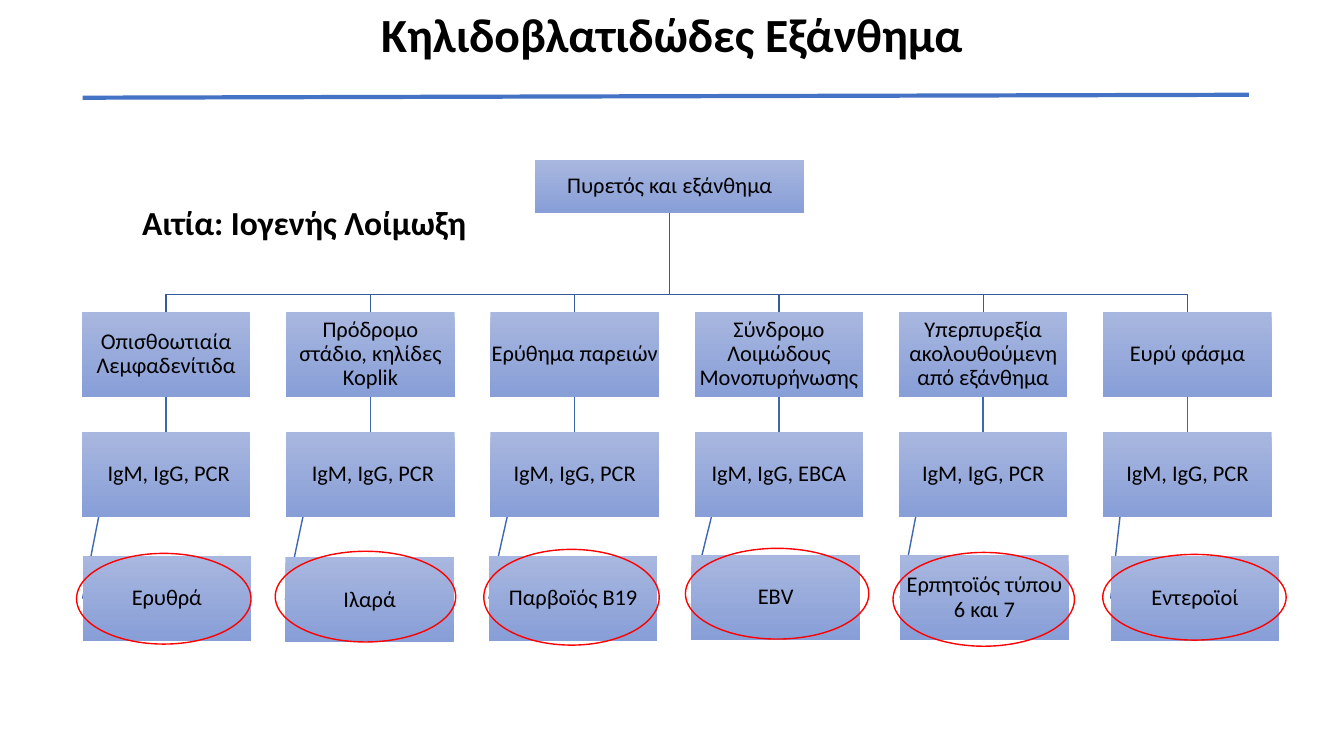
from lxml import etree
from pptx import Presentation
from pptx.dml.color import RGBColor
from pptx.enum import shapes as kinds, text as txt
from pptx.oxml.ns import qn
from pptx.util import Pt

TITLE = "Κηλιδοβλατιδώδες Εξάνθημα"
CAUSE = "Αιτία: Ιογενής Λοίμωξη"
ROOT = "Πυρετός και εξάνθημα"
# symptom, test, virus, virus box (left, top), oval (left, top, width, height)
COLS = [
    ("Οπισθοωτιαία Λεμφαδενίτιδα", " IgM, IgG, PCR", "Ερυθρά",
     (59, 397.4), (54.7, 395.3, 124.6, 64.8)),
    ("Πρόδρομο στάδιο, κηλίδες Koplik", " IgM, IgG, PCR", "Ιλαρά",
     (203.8, 398.2), (196.6, 393.8, 128.9, 64.8)),
    ("Ερύθημα παρειών", "IgM, IgG, PCR", "Παρβοϊός Β19",
     (349.2, 397.4), (345.6, 392.4, 125.3, 68.4)),
    ("Σύνδρομο Λοιμώδους Μονοπυρήνωσης", "IgM, IgG, EBCA", "ΕΒV",
     (493.9, 396.7), (489.6, 391.7, 131, 64.8)),
    ("Υπερπυρεξία ακολουθούμενη από εξάνθημα", "IgM, IgG, PCR",
     "Ερπητοϊός τύπου 6 και 7", (643, 396.7), (637.9, 394.6, 129.6, 67)),
    ("Ευρύ φάσμα", "IgM, IgG, PCR", "Εντεροϊοί",
     (793.4, 397.4), (787.7, 396, 131, 61.2)),
]
LEFT, STEP, WIDE, HIGH = 58.5, 145.9, 120.4, 60.4
SIGN_Y, TEST_Y, BUS_Y = 223, 308.7, 210.2
ROOT_AT = (382.3, 114.5, 192.2, 37.4)
ROOT_X = ROOT_AT[0] + ROOT_AT[2] / 2
ROOT_END = ROOT_AT[1] + ROOT_AT[3]
BUS, LINK, RULE, RED = "365B9D", "3E67B2", "4472C4", "FF0000"
SHADES = ("A8B7DF", "889ED7")


def rgb(code):
    return RGBColor.from_string(code)


def style(para, size, bold=False, align=None):
    para.alignment = align
    para.line_spacing = 0.9
    para.space_before = Pt(0)
    for run in para.runs:
        font = run.font
        font.name, font.size, font.bold = "Calibri", Pt(size), bold
        font.color.rgb = rgb("000000")


def place(shape, left, top, width, height):
    shape.left, shape.top = Pt(left), Pt(top)
    shape.width, shape.height = Pt(width), Pt(height)


def box(label, left, top, width=WIDE, height=HIGH):
    rect = slide.shapes.add_shape(
        kinds.MSO_SHAPE.RECTANGLE, Pt(left), Pt(top), Pt(width), Pt(height))
    rect.shadow.inherit = False
    rect.line.fill.background()
    rect.fill.gradient()
    rect.fill.gradient_angle = 270
    for stop, shade in zip(rect.fill.gradient_stops, SHADES):
        stop.color.rgb = rgb(shade)
    frame = rect.text_frame
    frame.word_wrap = True
    frame.vertical_anchor = txt.MSO_ANCHOR.MIDDLE
    frame.margin_left = frame.margin_right = Pt(0.8)
    frame.margin_top = frame.margin_bottom = Pt(0.8)
    frame.text = label
    style(frame.paragraphs[0], 16, align=txt.PP_ALIGN.CENTER)
    return rect


def line(start, end, color, width=1):
    join = slide.shapes.add_connector(
        kinds.MSO_CONNECTOR.STRAIGHT, *[Pt(v) for v in (*start, *end)])
    join.line.color.rgb, join.line.width = rgb(color), Pt(width)
    etree.SubElement(join._element.spPr, qn("a:effectLst"))
    return join


def branch(mid):
    """Draw the bent line from the root box down to one column."""
    pen = slide.shapes.build_freeform(Pt(ROOT_X), Pt(ROOT_END))
    bends = [(ROOT_X, BUS_Y), (mid, BUS_Y), (mid, SIGN_Y)]
    pen.add_line_segments([(Pt(x), Pt(y)) for x, y in bends], close=False)
    bent = pen.convert_to_shape()
    bent.shadow.inherit = False
    bent.fill.background()
    bent.line.color.rgb, bent.line.width = rgb(BUS), Pt(1)


def ring(left, top, width, height):
    oval = slide.shapes.add_shape(
        kinds.MSO_SHAPE.OVAL, Pt(left), Pt(top), Pt(width), Pt(height))
    oval.shadow.inherit = False
    oval.fill.background()
    oval.line.color.rgb, oval.line.width = rgb(RED), Pt(1)


deck = Presentation()
deck.slide_width, deck.slide_height = Pt(960), Pt(540)
slide = deck.slides.add_slide(deck.slide_layouts[1])

title, body = slide.placeholders
place(title, 0, 0.7, 960, 104.4)
frame = title.text_frame
frame.text = TITLE
frame.auto_size = txt.MSO_AUTO_SIZE.NONE
frame.vertical_anchor = txt.MSO_ANCHOR.MIDDLE
frame.margin_bottom = Pt(56)
style(frame.paragraphs[0], 34, True, txt.PP_ALIGN.CENTER)

place(body, 94.3, 144, 828, 342.7)
frame = body.text_frame
frame.text = CAUSE
frame.auto_size = txt.MSO_AUTO_SIZE.NONE
para = frame.paragraphs[0]
props = para._p.get_or_add_pPr()
props.set("marL", "0")
props.set("indent", "0")
etree.SubElement(props, qn("a:buNone"))
style(para, 24, True)

for col in range(len(COLS)):
    branch(LEFT + col * STEP + WIDE / 2)
box(ROOT, *ROOT_AT)
for col, (sign, test, virus, spot, _) in enumerate(COLS):
    left = LEFT + col * STEP
    mid = left + WIDE / 2
    top = box(sign, left, SIGN_Y)
    check = box(test, left, TEST_Y)
    cause = box(virus, *spot)
    down = line((mid, SIGN_Y + HIGH), (mid, TEST_Y), LINK)
    down.begin_connect(top, 2)
    down.end_connect(check, 0)
    slant = line((left + 12, TEST_Y + HIGH),
                 (spot[0], spot[1] + HIGH / 2), LINK)
    slant.end_connect(cause, 1)
    # The slanted line runs behind the virus box
    slide.shapes._spTree.insert(2, slant._element)
for *_, oval in COLS:
    ring(*oval)
line((59, 69.8), (892, 67.7), RULE, 3)

deck.save("out.pptx")
